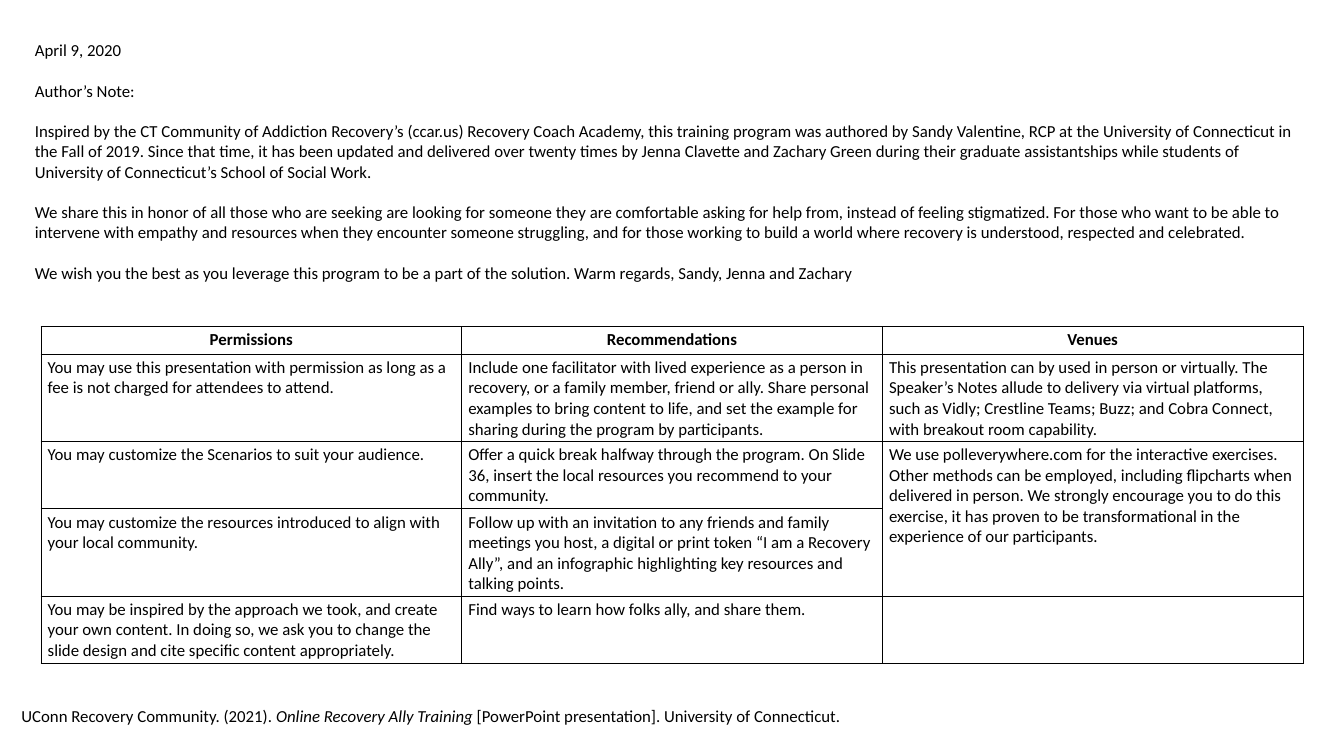
from lxml import etree
from pptx import Presentation
from pptx.dml.color import RGBColor
from pptx.enum.text import MSO_AUTO_SIZE, PP_ALIGN
from pptx.oxml.ns import qn
from pptx.util import Inches, Pt

CENTER = PP_ALIGN.CENTER
LEFT = PP_ALIGN.LEFT
GROW = MSO_AUTO_SIZE.SHAPE_TO_FIT_TEXT
COLORS = {"ink": "000000"}
FONT = "Calibri"
SIZE = 18

NOTE = [
    "April 9, 2020",
    "Author’s Note:",
    "Inspired by the CT Community of Addiction Recovery’s (ccar.us) Recovery Coach Academy, "
    "this training program was authored by Sandy Valentine, RCP at the University of Connecticut "
    "in the Fall of 2019. Since that time, it has been updated and delivered over twenty times by "
    "Jenna Clavette and Zachary Green during their graduate assistantships while students of "
    "University of Connecticut’s School of Social Work.",
    "We share this in honor of all those who are seeking are looking for someone they are "
    "comfortable asking for help from, instead of feeling stigmatized. For those who want to be "
    "able to intervene with empathy and resources when they encounter someone struggling, and for "
    "those working to build a world where recovery is understood, respected and celebrated.",
    "We wish you the best as you leverage this program to be a part of the solution. "
    "Warm regards, Sandy, Jenna and Zachary",
]
CITE = [
    ("UConn Recovery Community. (2021). ", False),
    ("Online Recovery Ally Training", True),
    (" [PowerPoint presentation]. University of Connecticut.", False),
]
ROWS = [
    ["Permissions", "Recommendations", "Venues"],
    [
        "You may use this presentation with permission as long as a fee is not charged for "
        "attendees to attend.",
        "Include one facilitator with lived experience as a person in recovery, or a family "
        "member, friend or ally. Share personal examples to bring content to life, and set the "
        "example for sharing during the program by participants.",
        "This presentation can by used in person or virtually. The Speaker’s Notes allude to "
        "delivery via virtual platforms, such as Vidly; Crestline Teams; Buzz; and Cobra "
        "Connect, with breakout room capability.",
    ],
    [
        "You may customize the Scenarios to suit your audience.",
        "Offer a quick break halfway through the program. On Slide 36, insert the local "
        "resources you recommend to your community.",
        "We use polleverywhere.com for the interactive exercises. Other methods can be employed, "
        "including flipcharts when delivered in person. We strongly encourage you to do this "
        "exercise, it has proven to be transformational in the experience of our participants.",
    ],
    [
        "You may customize the resources introduced to align with your local community.",
        "Follow up with an invitation to any friends and family meetings you host, a digital or "
        "print token “I am a Recovery Ally”, and an infographic highlighting key resources and "
        "talking points.",
        "",
    ],
    [
        "You may be inspired by the approach we took, and create your own content. In doing so, "
        "we ask you to change the slide design and cite specific content appropriately.",
        "Find ways to learn how folks ally, and share them.",
        "",
    ],
]
HEIGHTS = [0.41, 1.3, 1, 1.3, 1]


class Page:
    def __init__(self, slide):
        self.slide = slide

    def style(self, para, bold=False):
        font = para.font
        font.name = FONT
        font.size = Pt(SIZE)
        font.bold = bold
        font.color.rgb = RGBColor.from_string(COLORS["ink"])

    def text(self, left, top, width, height, paras, gap=0):
        box = self.slide.shapes.add_textbox(
            Inches(left), Inches(top), Inches(width), Inches(height))
        frame = box.text_frame
        frame.word_wrap = True
        frame.auto_size = GROW
        for i, runs in enumerate(paras):
            para = frame.add_paragraph() if i else frame.paragraphs[0]
            if i:
                para.space_before = Pt(gap)
            self.style(para)
            for words, slant in runs:
                run = para.add_run()
                run.text = words
                if slant:
                    run.font.italic = True

    def border(self, cell):
        props = cell._tc.get_or_add_tcPr()
        for side in ("lnL", "lnR", "lnT", "lnB"):
            line = etree.SubElement(props, qn(f"a:{side}"), w=str(Pt(1)))
            fill = etree.SubElement(line, qn("a:solidFill"))
            etree.SubElement(fill, qn("a:srgbClr"), val=COLORS["ink"])

    def table(self, left, top, width, rows, heights):
        frame = self.slide.shapes.add_table(
            len(rows), len(rows[0]), Inches(left), Inches(top),
            Inches(width), Inches(sum(heights)))
        table = frame.table
        table.first_row = False
        table.horz_banding = False
        for r, (texts, height) in enumerate(zip(rows, heights)):
            table.rows[r].height = Inches(height)
            for c, words in enumerate(texts):
                cell = table.cell(r, c)
                cell.text = words
                para = cell.text_frame.paragraphs[0]
                para.alignment = LEFT if r else CENTER
                self.style(para, bold=r == 0)
                self.border(cell)
                cell.fill.background()
        return table


def main():
    deck = Presentation()
    deck.slide_width = Inches(20)
    deck.slide_height = Inches(11.25)
    page = Page(deck.slides.add_slide(deck.slide_layouts[6]))
    page.text(0.22, 10.46, 18.87, 0.4, [CITE])
    page.text(0.42, 0.54, 19.17, 3.74, [[(words, False)] for words in NOTE], gap=22)
    table = page.table(0.61, 4.86, 18.78, ROWS, HEIGHTS)
    table.cell(2, 2).merge(table.cell(3, 2))
    deck.save("out.pptx")


if __name__ == "__main__":
    main()
